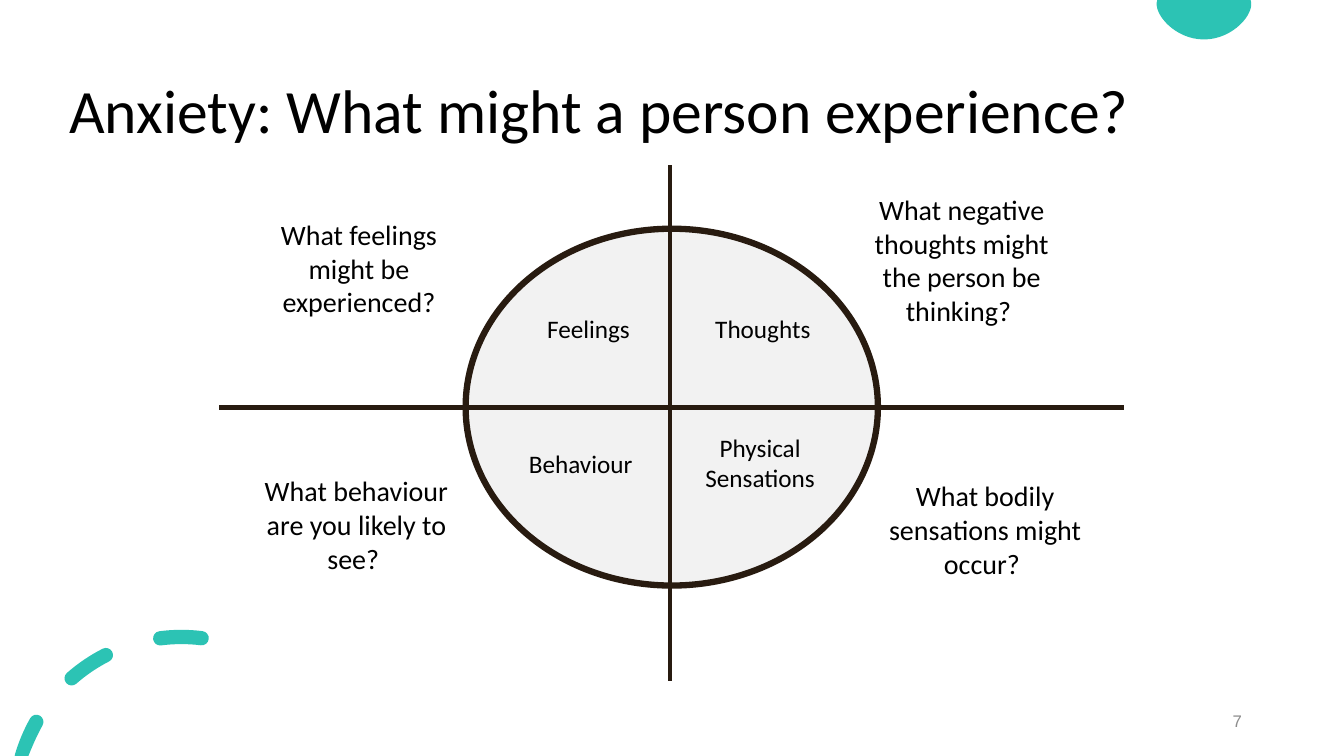
from math import cos, radians, sin, tan

from lxml.etree import SubElement
from pptx import Presentation
from pptx.dml.color import RGBColor
from pptx.enum.shapes import MSO_CONNECTOR, MSO_SHAPE
from pptx.enum.text import MSO_ANCHOR, PP_ALIGN
from pptx.oxml.ns import qn
from pptx.util import Pt

# Content; boxes are left, top, width, height in points
TITLE = "Anxiety: What might a person experience?"
PAGE = "7"
LABELS = [
    ("Feelings", (366.4, 220.3, 108, 29)),
    ("Thoughts", (485.5, 220.3, 118.8, 29)),
    ("Behaviour", (349.3, 316.8, 131, 29)),
    ("Physical Sensations", (474.2, 305.3, 137.5, 51)),
]
PROMPTS = [
    ("What feelings might be experienced?", (182.6, 152, 147.6, 96.5)),
    ("What negative thoughts might the person be thinking? ", (604.8, 133.9, 164.2, 108)),
    ("What behaviour are you likely to see? ", (172.5, 334.9, 164.2, 90.7)),
    ("What bodily sensations might occur? ", (627, 338.5, 153.4, 102.2)),
]
COLORS = {"teal": "2CC3B4", "dark": "281B10", "pale": "F2F2F2",
          "white": "FFFFFF", "black": "000000", "grey": "8C8C8C"}
WIDE, HIGH = 960, 540
DISC = (860, -5.6, 33.8)  # centre x, centre y, radius
RING = (129.6, 573.8, 118.8)
DASHES = [(-74, -60.7), (-41.3, -27), (-7.3, 7)]  # degrees clockwise from the top
HALF = 5.1  # half the thickness of a dash
OVAL = (332.6, 163.4, 294.5, 254.9)
LINES = [(478.8, 118.1, 478.8, 486.7), (156.8, 291.1, 802.8, 291.1)]

deck = Presentation()
deck.slide_width, deck.slide_height = Pt(WIDE), Pt(HIGH)
slide = deck.slides.add_slide(deck.slide_layouts[6])
shapes = slide.shapes


def tint(name):
    return RGBColor.from_string(COLORS[name])


def paint(shape, fill, line=None, width=0):
    shape.shadow.inherit = False
    shape.fill.solid()
    shape.fill.fore_color.rgb = tint(fill)
    if line:
        shape.line.color.rgb = tint(line)
        shape.line.width = Pt(width)
    else:
        shape.line.fill.background()


def write(text, box, size=18, font="Calibri", color="black",
          align=PP_ALIGN.CENTER, anchor=MSO_ANCHOR.TOP, space=None, fill=None):
    shape = shapes.add_textbox(*map(Pt, box))
    if fill:
        shape.fill.solid()
        shape.fill.fore_color.rgb = tint(fill)
    frame = shape.text_frame
    frame.word_wrap = True
    frame.vertical_anchor = anchor
    para = frame.paragraphs[0]
    para.alignment, para.line_spacing = align, space
    run = para.add_run()
    run.text = text
    run.font.size, run.font.name = Pt(size), font
    run.font.color.rgb = tint(color)


def spot(x, y, r, angle):
    """Point on a circle, with the angle clockwise from the top."""
    return x + r * sin(radians(angle)), y - r * cos(radians(angle))


def arc(x, y, r, start, end, parts=1):
    """Bezier points of an arc: two handles and an end for each part."""
    step = (end - start) / parts
    reach = 4 / 3 * tan(radians(step / 4)) * r
    points = []
    for i in range(parts):
        a, b = start + i * step, start + (i + 1) * step
        (ax, ay), (bx, by) = spot(x, y, r, a), spot(x, y, r, b)
        points += [(ax + reach * cos(radians(a)), ay + reach * sin(radians(a))),
                   (bx - reach * cos(radians(b)), by - reach * sin(radians(b))),
                   (bx, by)]
    return points


def outline(loops):
    """One filled shape from closed curves, cut at the slide's edges."""
    loops = [[(Pt(x), Pt(min(max(y, 0), HIGH))) for x, y in loop] for loop in loops]
    pen = shapes.build_freeform(*loops[0][-1])
    for i, loop in enumerate(loops):
        if i:
            pen.move_to(*loop[-1])
        pen.add_line_segments(loop, close=True)
    shape = pen.convert_to_shape()
    # Every three line points become one curve
    lines = list(shape._element.iter(qn("a:lnTo")))
    for first, *rest in zip(lines[::3], lines[1::3], lines[2::3]):
        curve = first.getparent().makeelement(qn("a:cubicBezTo"))
        first.addprevious(curve)
        for line in (first, *rest):
            curve.append(line[0])
            line.getparent().remove(line)
    paint(shape, "teal")


def dash(start, end):
    """Curved bar with round ends."""
    x, y, r = RING
    return (arc(x, y, r + HALF, start, end)
            + arc(*spot(x, y, r, end), HALF, end, end + 180, 2)
            + arc(x, y, r - HALF, end, start)
            + arc(*spot(x, y, r, start), HALF, start + 180, start + 360, 2))


# Corner decoration
x, y, r = DISC
outline([arc(x, y, r, 80.5, 279.5, 2) + [spot(x, y, r, 279.5)] + [spot(x, y, r, 80.5)] * 2])
outline([dash(*ends) for ends in DASHES])

# Page number and title
write(PAGE, (678.2, 500.4, 216, 28.8), size=12, font="Arial", color="grey",
      align=PP_ALIGN.RIGHT, anchor=MSO_ANCHOR.MIDDLE)
write(TITLE, (42.5, 28.8, 828, 104.4), size=44, align=PP_ALIGN.LEFT,
      anchor=MSO_ANCHOR.MIDDLE, space=0.9, fill="white")

# Oval split by two axes
oval = shapes.add_shape(MSO_SHAPE.OVAL, *map(Pt, OVAL))
paint(oval, "pale", "dark", 4.5)
for ends in LINES:
    axis = shapes.add_connector(MSO_CONNECTOR.STRAIGHT, *map(Pt, ends))
    axis.line.color.rgb = tint("dark")
    axis.line.width = Pt(3)
    SubElement(axis._element.spPr, qn("a:effectLst"))

# Quadrant labels and prompts
for text, box in LABELS:
    write(text, box)
for text, box in PROMPTS:
    write(text, box, size=20)

deck.save("out.pptx")
